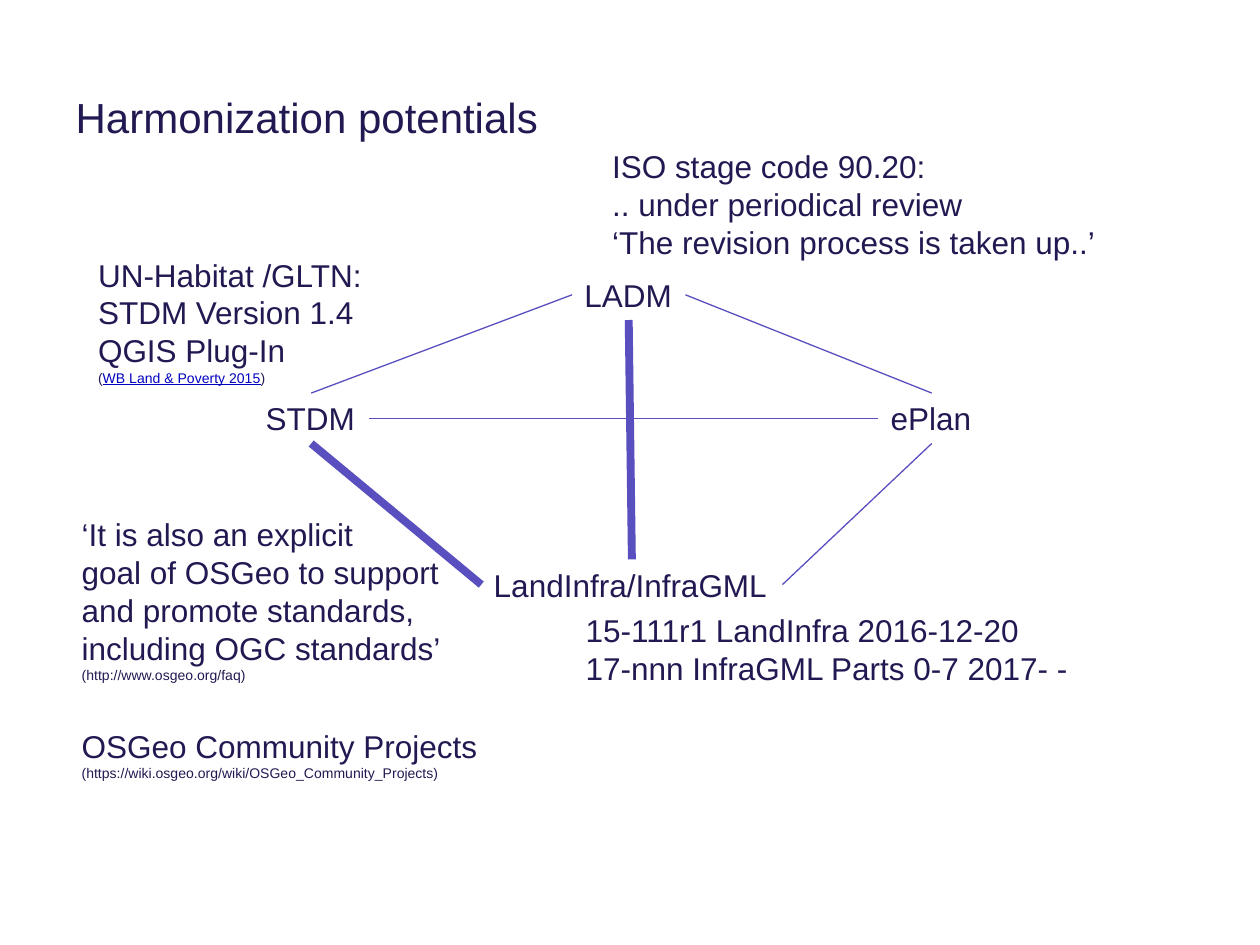
from lxml.etree import SubElement
from pptx import Presentation
from pptx.dml.color import RGBColor
from pptx.enum.shapes import MSO_CONNECTOR
from pptx.enum.text import MSO_ANCHOR, MSO_AUTO_SIZE, PP_ALIGN
from pptx.oxml.ns import qn
from pptx.util import Inches, Pt

COLORS = {"text": "211A52", "line": "594FBF", "link": "0000BF"}
FONT = "Arial"
BODY, SMALL = 18, 8
THIN, THICK = 0.75, 4.5
TOP, LEFT, BOTTOM, RIGHT = range(4)

NODE_HEIGHT = 0.4
NODES = {  # name: left, top, width
    "LADM": (4.54, 2.14, 0.9),
    "STDM": (2.01, 3.12, 0.92),
    "ePlan": (6.97, 3.12, 0.85),
    "LandInfra/InfraGML": (3.82, 4.44, 2.39),
}
LINKS = [  # from node, side, to node, side, width
    ("STDM", TOP, "LADM", LEFT, THIN),
    ("LADM", RIGHT, "ePlan", TOP, THIN),
    ("ePlan", BOTTOM, "LandInfra/InfraGML", RIGHT, THIN),
    ("STDM", BOTTOM, "LandInfra/InfraGML", LEFT, THICK),
    ("STDM", RIGHT, "ePlan", LEFT, THIN),
    ("LADM", BOTTOM, "LandInfra/InfraGML", TOP, THICK),
]
NOTES = [  # area, wrap, body lines, small source line as (text, color) spans
    ((4.76, 1.12, 4.13, 1.01), False,
     ["ISO stage code 90.20:", ".. under periodical review",
      "‘The revision process is taken up..’"], []),
    ((4.55, 4.8, 4.06, 0.71), False,
     ["15-111r1 LandInfra 2016-12-20", "17-nnn InfraGML Parts 0-7 2017- -"], []),
    ((0.55, 4.04, 3.11, 1.45), True,
     ["‘It is also an explicit",
      "goal of OSGeo to support and promote standards, including OGC standards’"],
     [("(http://www.osgeo.org/faq)", "text")]),
    ((0.55, 5.72, 3.37, 0.54), False, ["OSGeo Community Projects"],
     [("(https://wiki.osgeo.org/wiki/OSGeo_Community_Projects)", "text")]),
    ((0.68, 1.98, 2.31, 1.14), False,
     ["UN-Habitat /GLTN:", "STDM Version 1.4", "QGIS Plug-In"],
     [("(", "text"), ("WB Land & Poverty 2015", "link"), (")", "text")]),
]


def set_font(font, size, color="text"):
    font.name = FONT
    font.size = Pt(size)
    font.color.rgb = RGBColor.from_string(COLORS[color])


def add_title(page, text):
    title = page.shapes.title
    title.left, title.top, title.width, title.height = map(Inches, (0.5, 0.3, 9, 1.25))
    title.text_frame.vertical_anchor = MSO_ANCHOR.MIDDLE
    title.text_frame.text = text
    para = title.text_frame.paragraphs[0]
    para.alignment = PP_ALIGN.LEFT
    set_font(para.font, 24)


def add_source(para, spans):
    """Fill a small-print paragraph; spans in the link colour are underlined."""
    set_font(para.font, SMALL)
    for text, color in spans:
        span = para.add_run()
        span.text = text
        set_font(span.font, SMALL, color)
        span.font.underline = color == "link"


def add_text(page, area, lines, wrap=False, source=()):
    box = page.shapes.add_textbox(*map(Inches, area))
    frame = box.text_frame
    frame.word_wrap = wrap
    frame.auto_size = MSO_AUTO_SIZE.SHAPE_TO_FIT_TEXT
    frame.text = "\n".join(lines)
    for para in frame.paragraphs:
        set_font(para.font, BODY)
    if source:
        add_source(frame.add_paragraph(), source)
    return box


def add_link(page, start, start_side, end, end_side, width):
    line = page.shapes.add_connector(MSO_CONNECTOR.STRAIGHT, 0, 0, 0, 0)
    line.begin_connect(start, start_side)
    line.end_connect(end, end_side)
    line.line.color.rgb = RGBColor.from_string(COLORS["line"])
    line.line.width = Pt(width)
    SubElement(line._element.spPr, qn("a:effectLst"))


def main():
    deck = Presentation()
    deck.slide_width, deck.slide_height = Inches(10), Inches(7.5)
    page = deck.slides.add_slide(deck.slide_layouts[5])
    add_title(page, "Harmonization potentials")
    nodes = {name: add_text(page, (*place, NODE_HEIGHT), [name])
             for name, place in NODES.items()}
    for start, start_side, end, end_side, width in LINKS:
        add_link(page, nodes[start], start_side, nodes[end], end_side, width)
    for area, wrap, lines, source in NOTES:
        add_text(page, area, lines, wrap, source)
    deck.save("out.pptx")


if __name__ == "__main__":
    main()
